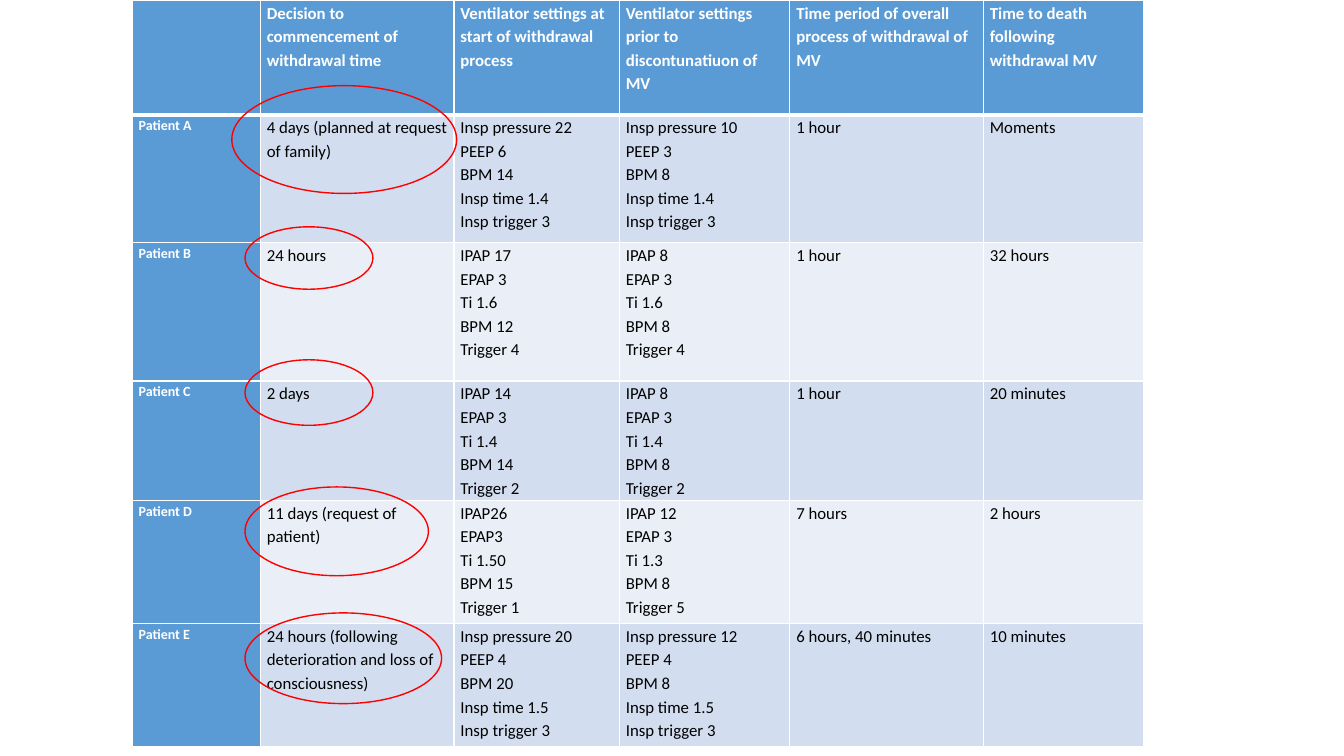
from pptx import Presentation
from pptx.dml.color import RGBColor
from pptx.enum.shapes import MSO_SHAPE
from pptx.oxml import parse_xml
from pptx.oxml.ns import nsdecls
from pptx.util import Pt

HEADS = [
    "",
    "Decision to commencement of withdrawal time",
    "Ventilator settings at start of withdrawal process",
    "Ventilator settings prior to discontunatiuon of MV",
    "Time period of overall process of withdrawal of MV",
    "Time to death following withdrawal MV",
]
INSP = ["Insp pressure", "PEEP", "BPM", "Insp time", "Insp trigger"]
IPAP = ["IPAP", "EPAP", "Ti", "BPM", "Trigger"]


def join(names, values):
    return "\n".join(f"{name} {value}" for name, value in zip(names, values.split()))


CASES = [
    ("Patient A", "4 days (planned at request of family)",
     join(INSP, "22 6 14 1.4 3"), join(INSP, "10 3 8 1.4 3"), "1 hour", "Moments"),
    ("Patient B", "24 hours",
     join(IPAP, "17 3 1.6 12 4"), join(IPAP, "8 3 1.6 8 4"), "1 hour", "32 hours"),
    ("Patient C", "2 days",
     join(IPAP, "14 3 1.4 14 2"), join(IPAP, "8 3 1.4 8 2"), "1 hour", "20 minutes"),
    ("Patient D", "11 days (request of patient)",
     "IPAP26\nEPAP3\nTi 1.50\nBPM 15\nTrigger 1", join(IPAP, "12 3 1.3 8 5"),
     "7 hours", "2 hours"),
    ("Patient E", "24 hours (following deterioration and loss of consciousness)",
     join(INSP, "20 4 20 1.5 3"), join(INSP, "12 4 8 1.5 3"),
     "6 hours, 40 minutes", "10 minutes"),
]
WIDTHS = [91.5, 138.3, 118.2, 121.8, 138.3, 114.6]
HEIGHTS = [82, 91.5, 98.7, 85.2, 88, 88]
RINGS = [
    (165.6, 61.2, 160.6, 77),
    (175, 162, 91.4, 44.6),
    (175, 257, 91.4, 46.8),
    (175, 347.8, 131, 63.4),
    (175, 437.8, 140.4, 64.8),
]
BLUE, PALE, LIGHT, WHITE, BLACK, RED = (
    "5B9BD5", "D2DEEF", "EAEFF7", "FFFFFF", "000000", "FF0000")


def tint(part, color):
    part.solid()
    part.fore_color.rgb = RGBColor.from_string(color)


def edge(cell, side, width):
    cell._tc.get_or_add_tcPr().append(parse_xml(
        f'<a:{side} {nsdecls("a")} w="{Pt(width)}"><a:solidFill>'
        f'<a:srgbClr val="{WHITE}"/></a:solidFill></a:{side}>'))


def write(cell, text, size, color, bold):
    para = cell.text_frame.paragraphs[0]
    para.line_spacing = 1.15
    for i, line in enumerate(text.split("\n")):
        if i:
            para.add_line_break()
        run = para.add_run()
        run.text = line
        run.font.name = "Calibri"
        run.font.size = Pt(size)
        run.font.bold = bold
        tint(run.font.fill, color)


def fill_cell(cell, text, row, col):
    head = row == 0
    label = head or col == 0
    cell.margin_left = cell.margin_right = Pt(4.6)
    cell.margin_top = cell.margin_bottom = Pt(0)
    for side in ("lnL", "lnR", "lnT", "lnB"):
        thick = (head and side == "lnB") or (row == 1 and side == "lnT")
        edge(cell, side, 3 if thick else 1)
    tint(cell.fill, BLUE if label else PALE if row % 2 else LIGHT)
    if text:
        size = 10 if label and not head else 12
        write(cell, text, size, WHITE if label else BLACK, label)


def add_grid(slide):
    rows = [HEADS, *CASES]
    grid = slide.shapes.add_table(
        len(rows), len(HEADS), Pt(94.5), Pt(0), Pt(sum(WIDTHS)), Pt(sum(HEIGHTS))).table
    grid.first_col = True
    for col, width in zip(grid.columns, WIDTHS):
        col.width = Pt(width)
    for row, height in zip(grid.rows, HEIGHTS):
        row.height = Pt(height)
    for r, texts in enumerate(rows):
        for c, text in enumerate(texts):
            fill_cell(grid.cell(r, c), text, r, c)


def add_ring(slide, box):
    ring = slide.shapes.add_shape(MSO_SHAPE.OVAL, *map(Pt, box))
    ring.shadow.inherit = False
    ring.fill.background()
    tint(ring.line.fill, RED)
    ring.line.width = Pt(1)


def main():
    deck = Presentation()
    deck.slide_width, deck.slide_height = Pt(960), Pt(540)
    slide = deck.slides.add_slide(deck.slide_layouts[6])
    add_grid(slide)
    for box in RINGS:
        add_ring(slide, box)
    deck.save("out.pptx")


if __name__ == "__main__":
    main()
